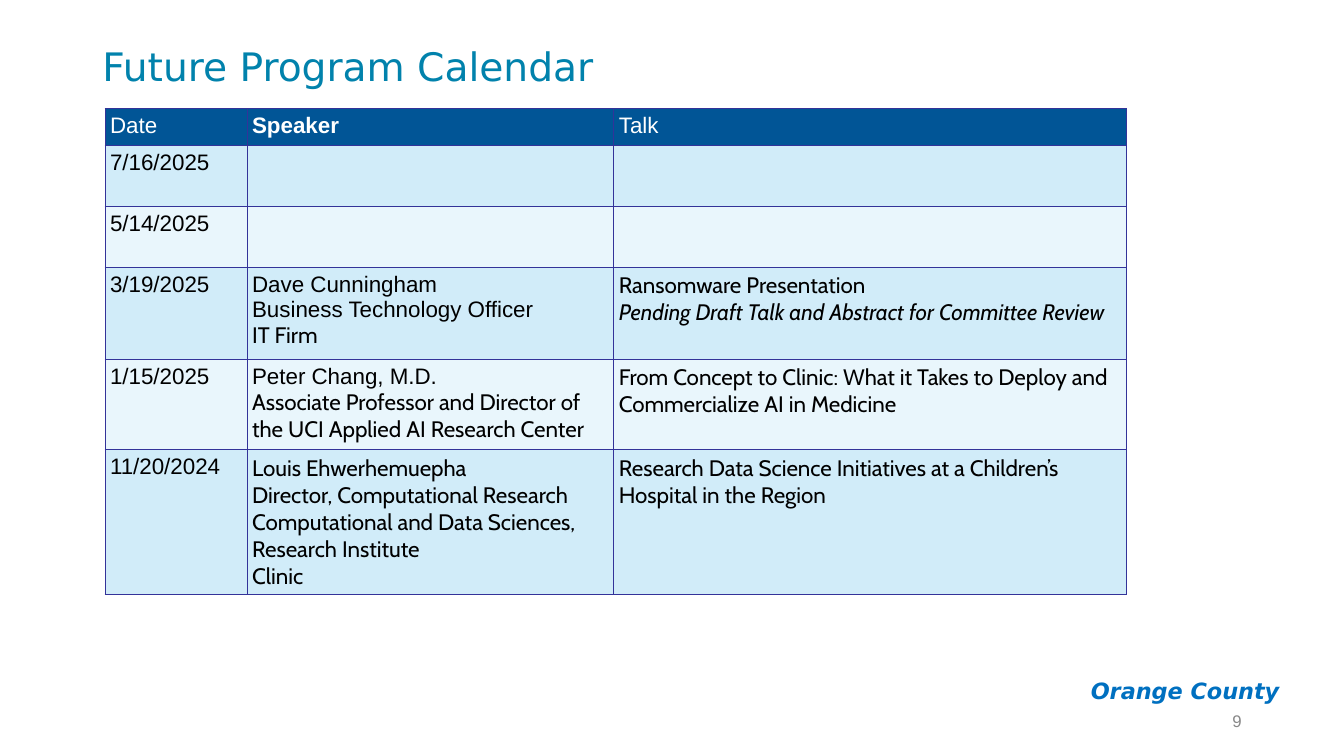
from dataclasses import dataclass

from lxml.etree import SubElement
from pptx import Presentation
from pptx.dml.color import RGBColor as RGB
from pptx.enum.text import MSO_ANCHOR as Anchor, MSO_AUTO_SIZE as Fit, PP_ALIGN as Align
from pptx.oxml.ns import qn
from pptx.util import Pt

COLORS = {
    "title": "0182AC", "chapter": "0070C0", "number": "888888",
    "head": "015596", "dark": "D1ECF9", "light": "E9F6FC",
    "rule": "333399", "white": "FFFFFF", "black": "000000",
}
SANS, CABIN, WIDE = "Arial", "Cabin", "DejaVu Sans"


@dataclass(frozen=True)
class Line:
    text: str
    font: str = SANS
    size: float = 16
    color: str = "black"
    bold: bool = False
    italic: bool = False


@dataclass(frozen=True)
class Row:
    height: float
    date: Line
    speaker: tuple[Line, ...] = ()
    talk: tuple[Line, ...] = ()


@dataclass(frozen=True)
class Label:
    box: tuple[float, float, float, float]
    line: Line
    pad: float
    anchor: Anchor


WIDTHS = (101.5, 262, 366.5)
ROWS = (
    Row(26.5, Line("Date", color="white"),
        (Line("Speaker", color="white", bold=True),),
        (Line("Talk", color="white"),)),
    Row(43.5, Line("7/16/2025")),
    Row(43.5, Line("5/14/2025")),
    Row(65.5, Line("3/19/2025"),
        (Line("Dave Cunningham"), Line("Business Technology Officer"),
         Line("IT Firm", CABIN)),
        (Line("Ransomware Presentation", CABIN),
         Line("Pending Draft Talk and Abstract for Committee Review", CABIN,
              italic=True))),
    Row(63.5, Line("1/15/2025"),
        (Line("Peter Chang, M.D."),
         Line("Associate Professor and Director of the UCI Applied AI Research Center",
              CABIN)),
        (Line("From Concept to Clinic: What it Takes to Deploy and "
              "Commercialize AI in Medicine", CABIN),)),
    Row(103.5, Line("11/20/2024"),
        (Line("Louis Ehwerhemuepha", CABIN),
         Line("Director, Computational Research", CABIN),
         Line("Computational and Data Sciences, Research Institute", CABIN),
         Line("Clinic", CABIN)),
        (Line("Research Data Science Initiatives at a Children’s Hospital "
              "in the Region", CABIN),)),
)
LABELS = (
    Label((756.5, 476.5, 164.5, 34),
          Line("Orange County", WIDE, 16, "chapter", True, True), 7.2, Anchor.TOP),
    Label((678, 500.5, 216, 28.5),
          Line("9", SANS, 12, "number"), 3.6, Anchor.MIDDLE),
)


def place(shape, box: tuple[float, float, float, float]) -> None:
    shape.left, shape.top, shape.width, shape.height = map(Pt, box)


def write(frame, lines: tuple[Line, ...]) -> None:
    """Put each line in a paragraph of its own."""
    for i, line in enumerate(lines):
        para = frame.add_paragraph() if i else frame.paragraphs[0]
        para.text = line.text
        font = para.font
        font.name, font.size = line.font, Pt(line.size)
        font.bold, font.italic = line.bold, line.italic
        font.color.rgb = RGB.from_string(COLORS[line.color])


def border(cell) -> None:
    props = cell._tc.get_or_add_tcPr()
    for side in ("lnL", "lnR", "lnT", "lnB"):
        edge = SubElement(props, qn(f"a:{side}"), w=str(Pt(0.75)))
        fill = SubElement(edge, qn("a:solidFill"))
        SubElement(fill, qn("a:srgbClr"), val=COLORS["rule"])


def add_title(slide) -> None:
    title = slide.shapes.title
    place(title, (66, 21, 828, 56))
    frame = title.text_frame
    frame.auto_size, frame.vertical_anchor = Fit.NONE, Anchor.MIDDLE
    write(frame, (Line("Future Program Calendar", WIDE, 28, "title"),))
    para = frame.paragraphs[0]
    para.alignment, para.line_spacing = Align.LEFT, 0.9


def add_label(slide, label: Label) -> None:
    frame = slide.shapes.add_textbox(*map(Pt, label.box)).text_frame
    frame.word_wrap, frame.vertical_anchor = True, label.anchor
    frame.margin_top = frame.margin_bottom = Pt(label.pad)
    write(frame, (label.line,))
    frame.paragraphs[0].alignment = Align.RIGHT


def add_calendar(slide) -> None:
    height = sum(row.height for row in ROWS)
    table = slide.shapes.add_table(
        len(ROWS), len(WIDTHS), Pt(75), Pt(77.5), Pt(sum(WIDTHS)), Pt(height)).table
    for col, width in zip(table.columns, WIDTHS):
        col.width = Pt(width)
    for r, row in enumerate(ROWS):
        table.rows[r].height = Pt(row.height)
        shade = "head" if r == 0 else "dark" if r % 2 else "light"
        for c, lines in enumerate(((row.date,), row.speaker, row.talk)):
            cell = table.cell(r, c)
            cell.margin_left = cell.margin_right = Pt(3.6)
            cell.margin_top = cell.margin_bottom = Pt(3.6)
            border(cell)
            cell.fill.solid()
            cell.fill.fore_color.rgb = RGB.from_string(COLORS[shade])
            write(cell.text_frame, lines)


def main() -> None:
    deck = Presentation()
    deck.slide_width, deck.slide_height = Pt(960), Pt(540)
    slide = deck.slides.add_slide(deck.slide_layouts[5])
    add_title(slide)
    for label in LABELS:
        add_label(slide, label)
    add_calendar(slide)
    deck.save("out.pptx")


if __name__ == "__main__":
    main()
